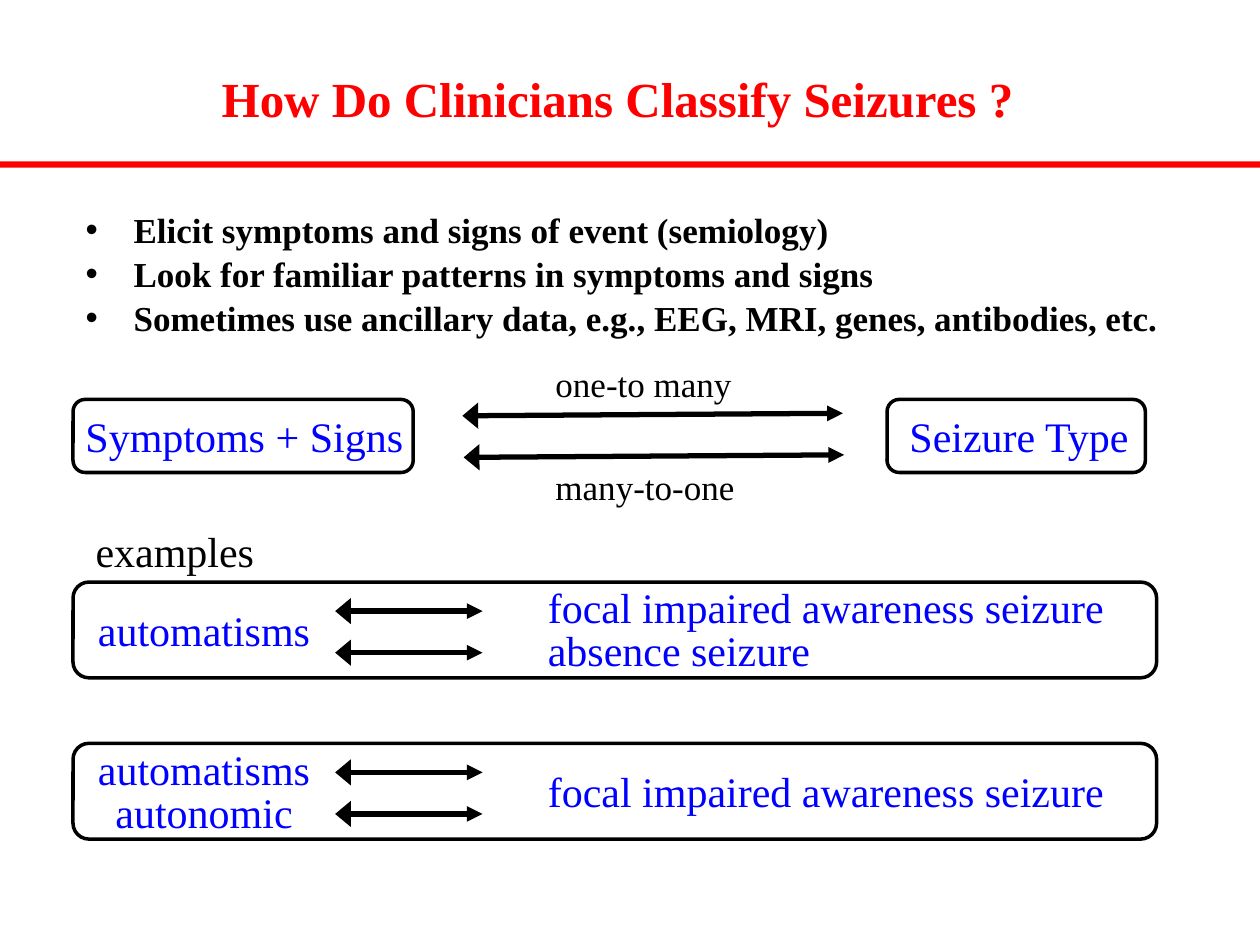
import dataclasses

import lxml.etree
import pptx
import pptx.dml.color
import pptx.enum.shapes
import pptx.enum.text
import pptx.oxml.ns
import pptx.util

SHAPE = pptx.enum.shapes.MSO_SHAPE
ALIGN = pptx.enum.text.PP_ALIGN
COLUMNS, ROWS = 100, 75


@dataclasses.dataclass(frozen=True)
class Theme:
    font: str = "Times New Roman"
    accent: str = "FF0000"
    ink: str = "000000"
    term: str = "0000FF"
    title: int = 28
    body: int = 20
    label: int = 24
    spacing: float = 1.05
    frame: int = 2
    arrow: int = 3


@dataclasses.dataclass(frozen=True)
class Box:
    left: float
    top: float
    width: float
    height: float

    def within(self, left, top, width, height):
        return Box(self.left + left, self.top + top, width, height)


THEME = Theme()
prs = pptx.Presentation()
prs.slide_width = pptx.util.Inches(10)
prs.slide_height = pptx.util.Inches(7.5)


def across(columns):
    return round(prs.slide_width * columns / COLUMNS)


def down(rows):
    return round(prs.slide_height * rows / ROWS)


def lengths(box):
    return across(box.left), down(box.top), across(box.width), down(box.height)


def rgb(color):
    return pptx.dml.color.RGBColor.from_string(color)


def write_text(holder, lines, size=THEME.label, color=THEME.term, bold=False,
               align=ALIGN.LEFT, wrap=False):
    frame = holder.text_frame
    frame.text = "\n".join(lines)
    frame.word_wrap = wrap
    frame.auto_size = pptx.enum.text.MSO_AUTO_SIZE.SHAPE_TO_FIT_TEXT
    frame.vertical_anchor = pptx.enum.text.MSO_ANCHOR.TOP
    for paragraph in frame.paragraphs:
        paragraph.alignment = align
        paragraph.line_spacing = THEME.spacing
        paragraph.space_before = paragraph.space_after = pptx.util.Pt(0)
        for run in paragraph.runs:
            run.font.name = THEME.font
            run.font.size = pptx.util.Pt(size)
            run.font.bold = bold
            run.font.color.rgb = rgb(color)


def add_label(slide, box, text, **text_format):
    write_text(slide.shapes.add_textbox(*lengths(box)), [text], **text_format)


def place(holder, box):
    holder.left, holder.top, holder.width, holder.height = lengths(box)


def add_frame(slide, box):
    frame = slide.shapes.add_shape(SHAPE.ROUNDED_RECTANGLE, *lengths(box))
    frame.shadow.inherit = False
    frame.fill.background()
    frame.line.color.rgb = rgb(THEME.ink)
    frame.line.width = pptx.util.Pt(THEME.frame)


def add_double_arrow(slide, left, top, width, rise=0):
    arrow = slide.shapes.add_connector(
        pptx.enum.shapes.MSO_CONNECTOR.STRAIGHT,
        across(left), down(top), across(left + width), down(top - rise))
    arrow.line.color.rgb = rgb(THEME.ink)
    arrow.line.width = pptx.util.Pt(THEME.arrow)
    outline = arrow.line._get_or_add_ln()
    for end, breadth in (("a:headEnd", "lg"), ("a:tailEnd", "med")):
        lxml.etree.SubElement(outline, pptx.oxml.ns.qn(end),
                              type="triangle", w=breadth, len="med")
    lxml.etree.SubElement(arrow._element.spPr, pptx.oxml.ns.qn("a:effectLst"))


def add_heading(slide, box, title):
    place(slide.shapes.title, box.within(16.6, 4.7, 65.5, 5.7))
    write_text(slide.shapes.title, [title], size=THEME.title,
               color=THEME.accent, bold=True)
    rule = slide.shapes.add_shape(
        SHAPE.RECTANGLE, *lengths(box.within(0, box.height - 0.5, box.width, 0.5)))
    rule.shadow.inherit = False
    rule.fill.solid()
    rule.fill.fore_color.rgb = rgb(THEME.accent)
    rule.line.fill.background()


def add_steps(slide, box, steps):
    body = slide.placeholders[1]
    place(body, box)
    write_text(body, steps, size=THEME.body, color=THEME.ink, bold=True, wrap=True)
    indent = across(3.8)
    for paragraph in body.text_frame.paragraphs:
        properties = paragraph._p.get_or_add_pPr()
        properties.set("marL", str(indent))
        properties.set("indent", str(-indent))
        lxml.etree.SubElement(properties, pptx.oxml.ns.qn("a:buChar"), char="•")


def add_mapping(slide, box, source, target):
    add_label(slide, box.within(0, 0.2, 27.2, 5), source)
    add_frame(slide, box.within(0, 0, 27, box.height))
    add_label(slide, box.within(65.4, 0.2, 19.4, 5), target)
    add_frame(slide, box.within(64.6, 0, 20.5, box.height))
    small = dict(size=THEME.body, color=THEME.ink)
    add_label(slide, box.within(37.3, -3.6, 16.1, 4.4), "one-to many", **small)
    add_label(slide, box.within(37.3, 4.6, 16.9, 4.4), "many-to-one", **small)
    for offset, top in ((30.9, 1.3), (31, 4.6)):
        add_double_arrow(slide, box.left + offset, box.top + top, 30.2, rise=0.2)


def add_example(slide, box, symptoms, seizures):
    add_frame(slide, box)
    line_tops = {1: [1.1], 2: [-0.7, 2.7]}
    for symptom, top in zip(symptoms, line_tops[len(symptoms)]):
        add_label(slide, box.within(0.9, top, 19, 5), symptom, align=ALIGN.CENTER)
    for (seizure, width), top in zip(seizures, line_tops[len(seizures)]):
        add_label(slide, box.within(36.7, top, width, 5), seizure)
    for top in (2.3, 5.6):
        add_double_arrow(slide, box.left + 20.8, box.top + top, 11.7)


def build_seizure_slide():
    slide = prs.slides.add_slide(prs.slide_layouts[1])
    add_heading(slide, Box(0, 0, COLUMNS, 13.3), "How Do Clinicians Classify Seizures ?")
    add_steps(slide, Box(5.8, 15.9, 90.8, 11.1), [
        "Elicit symptoms and signs of event (semiology)",
        "Look for familiar patterns in symptoms and signs",
        "Sometimes use ancillary data, e.g., EEG, MRI, genes, antibodies, etc.",
    ])
    add_mapping(slide, Box(5.8, 31.7, 85.1, 5.8), "Symptoms + Signs", "Seizure Type")
    add_label(slide, Box(6.6, 41, 15.2, 5), "examples", color=THEME.ink)
    focal = ("focal impaired awareness seizure", 46.5)
    absence = ("absence seizure", 23)
    add_example(slide, Box(5.8, 46.2, 86, 7.6), ["automatisms"], [focal, absence])
    add_example(slide, Box(5.8, 59, 86, 7.6), ["automatisms", "autonomic"], [focal])


if __name__ == "__main__":
    build_seizure_slide()
    prs.save("out.pptx")
